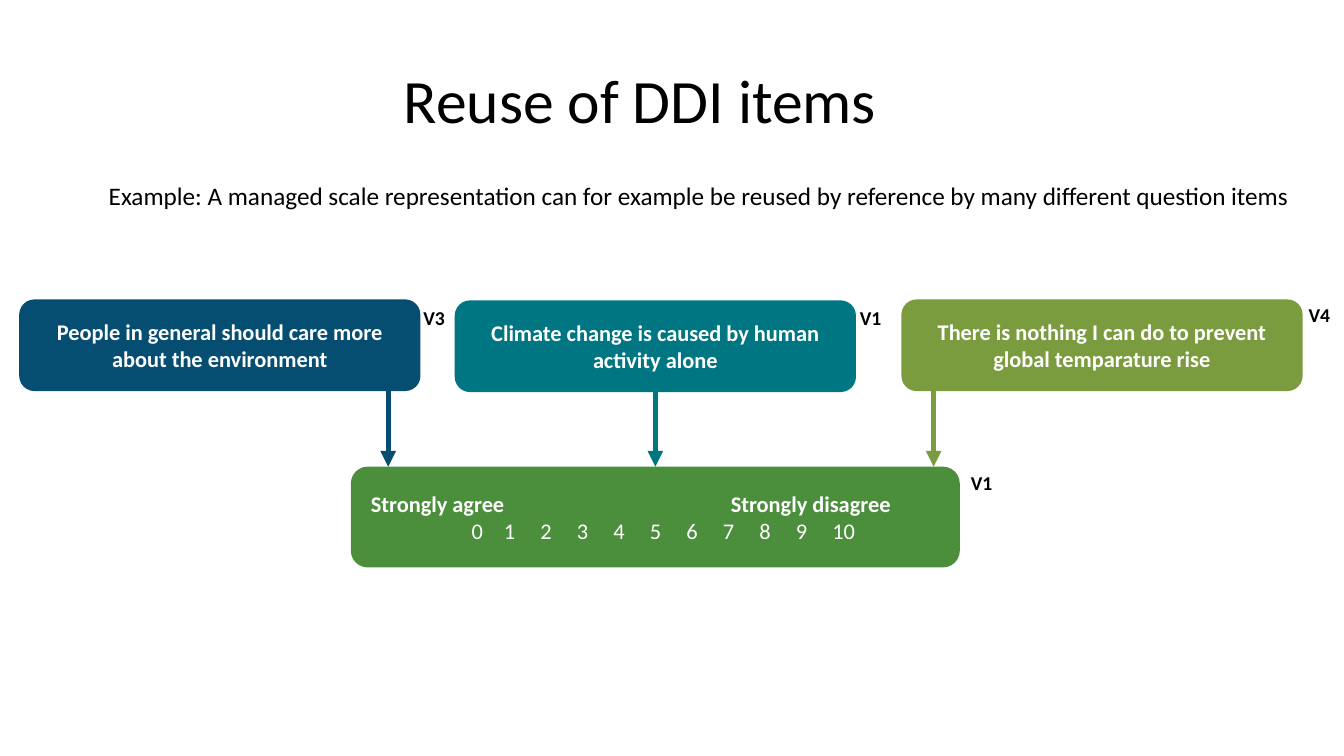
from lxml import etree
from pptx import Presentation
from pptx.dml.color import RGBColor
from pptx.enum.shapes import MSO_CONNECTOR, MSO_SHAPE
from pptx.enum.text import MSO_ANCHOR, PP_ALIGN
from pptx.oxml.ns import qn
from pptx.util import Inches, Pt

COLORS = {"navy": "054E72", "teal": "007682", "olive": "7B9C3E",
          "green": "4B8E3C", "black": "000000", "white": "FFFFFF"}
TITLE = "Reuse of DDI items"
EXAMPLE = ("Example: A managed scale representation can for example be "
           "reused by reference by many different question items")
QUESTIONS = [
    {"text": "People in general should care more about the environment",
     "color": "navy", "left": 0.19, "top": 2.97, "arrow": 3.85},
    {"text": "Climate change is caused by human activity alone",
     "color": "teal", "left": 4.51, "top": 2.98, "arrow": None},
    {"text": "There is nothing I can do to prevent global temparature rise",
     "color": "olive", "left": 8.94, "top": 2.97, "arrow": 9.26},
]
VERSIONS = [("V3", 4.1, 2.99), ("V1", 8.43, 2.99), ("V4", 12.88, 2.96), ("V1", 9.53, 4.62)]
ENDS = ["Strongly agree", "Strongly disagree"]
POINTS = [str(n) for n in range(11)]
QUESTION_W, QUESTION_H = 3.98, 0.91
SCALE_LEFT, SCALE_TOP, SCALE_W, SCALE_H = 3.48, 4.63, 6.04, 1
ENDS_TABS = [3.57]
POINT_TABS = [1.0] + [1.32 + 0.362 * i for i in range(10)]


def rgb(name):
    """Return a named colour."""
    return RGBColor.from_string(COLORS[name])


def write(p, text, size, color, bold=False, align=PP_ALIGN.LEFT):
    """Fill and format one paragraph."""
    p.text = text
    p.alignment = align
    for r in p.runs:
        r.font.name = "Calibri"
        r.font.size = Pt(size)
        r.font.bold = bold
        r.font.color.rgb = rgb(color)


def set_tabs(p, stops):
    """Give a paragraph left-aligned tab stops."""
    tabs = etree.SubElement(p._p.get_or_add_pPr(), qn("a:tabLst"))
    for stop in stops:
        etree.SubElement(tabs, qn("a:tab"), pos=str(int(Inches(stop))), algn="l")


def add_label(s, text, box, size, bold=False, align=PP_ALIGN.LEFT, wrap=True):
    """Add a text box."""
    tf = s.shapes.add_textbox(*map(Inches, box)).text_frame
    tf.word_wrap = wrap
    write(tf.paragraphs[0], text, size, "black", bold, align)
    return tf


def add_box(s, box, color):
    """Add a rounded box."""
    sp = s.shapes.add_shape(MSO_SHAPE.ROUNDED_RECTANGLE, *map(Inches, box))
    sp.shadow.inherit = False
    sp.fill.solid()
    sp.fill.fore_color.rgb = rgb(color)
    sp.line.fill.background()
    sp.text_frame.word_wrap = True
    sp.text_frame.vertical_anchor = MSO_ANCHOR.MIDDLE
    return sp


def add_arrow(s, x, top, bottom, color):
    """Add a downward arrow."""
    line = s.shapes.add_connector(MSO_CONNECTOR.STRAIGHT, *map(Inches, (x, top, x, bottom)))
    line.line.width = Pt(3.75)
    line.line.color.rgb = rgb(color)
    etree.SubElement(line.line._get_or_add_ln(), qn("a:tailEnd"), type="triangle")
    etree.SubElement(line._element.spPr, qn("a:effectLst"))
    return line


def main():
    """Build the slide."""
    prs = Presentation()
    prs.slide_width, prs.slide_height = Inches(13.33), Inches(7.5)
    s = prs.slides.add_slide(prs.slide_layouts[6])

    tf = add_label(s, TITLE, (0.6, 0.52, 11.5, 1.01), 44, align=PP_ALIGN.CENTER)
    tf.vertical_anchor = MSO_ANCHOR.MIDDLE
    tf.paragraphs[0].line_spacing = 0.9
    add_label(s, EXAMPLE, (0.64, 1.74, 12.58, 0.4), 18, align=PP_ALIGN.CENTER)

    scale = add_box(s, (SCALE_LEFT, SCALE_TOP, SCALE_W, SCALE_H), "green")
    tf = scale.text_frame
    tf.margin_left = Inches(0.15)
    write(tf.paragraphs[0], "\t".join(ENDS), 16, "white", True)
    set_tabs(tf.paragraphs[0], ENDS_TABS)
    p = tf.add_paragraph()
    write(p, "\t" + "\t".join(POINTS), 16, "white")
    set_tabs(p, POINT_TABS)

    for q in QUESTIONS:
        sp = add_box(s, (q["left"], q["top"], QUESTION_W, QUESTION_H), q["color"])
        write(sp.text_frame.paragraphs[0], q["text"], 16, "white", True, PP_ALIGN.CENTER)
        x = q["arrow"] or q["left"] + QUESTION_W / 2
        line = add_arrow(s, x, q["top"] + QUESTION_H, SCALE_TOP, q["color"])
        if q["arrow"] is None:
            line.begin_connect(sp, 2)
            line.end_connect(scale, 0)

    for text, left, top in VERSIONS:
        add_label(s, text, (left, top, 0.42, 0.34), 14, True, wrap=False)

    prs.save("out.pptx")


if __name__ == "__main__":
    main()
